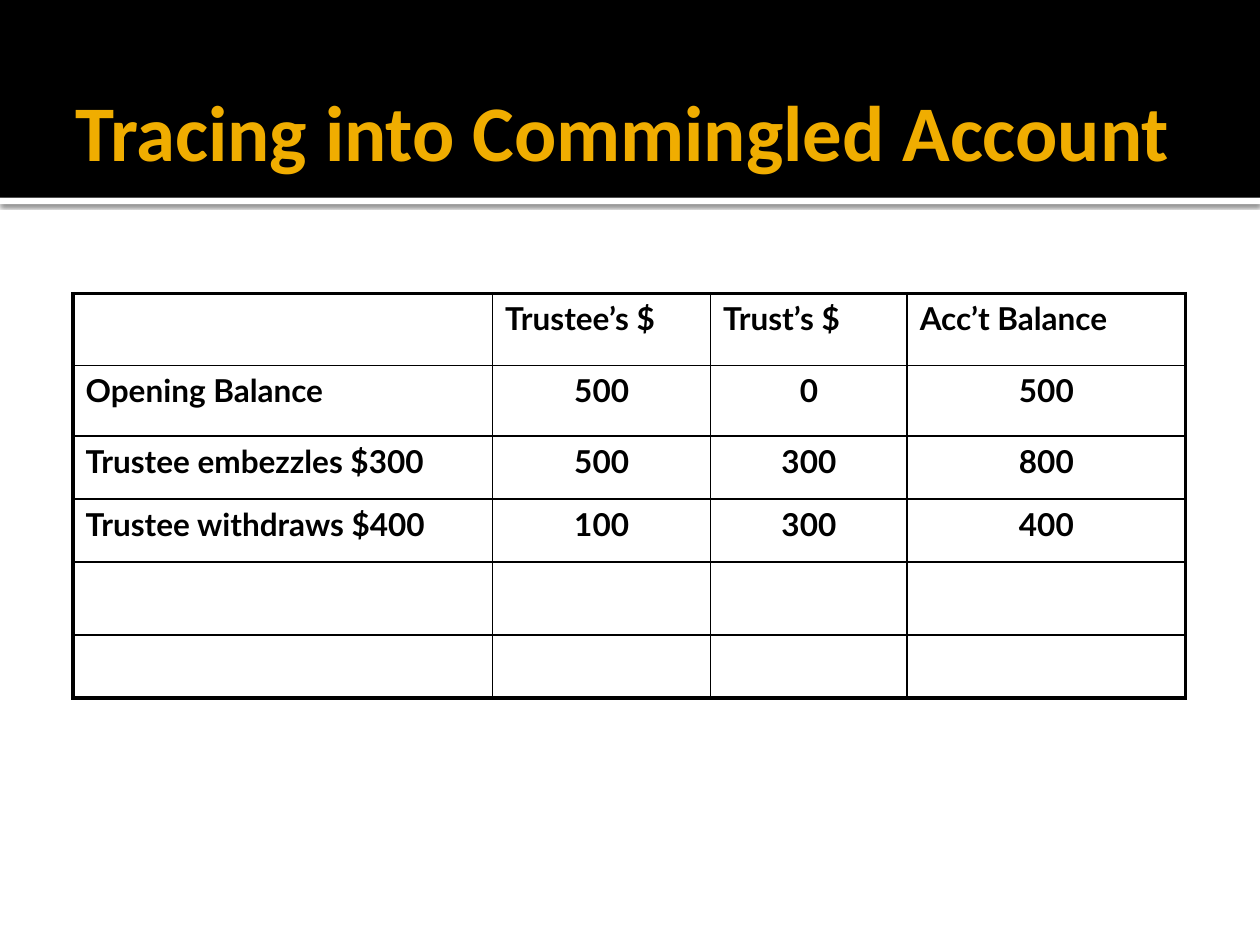
from lxml.etree import SubElement
from pptx import Presentation
from pptx.dml.color import RGBColor
from pptx.enum.shapes import MSO_SHAPE
from pptx.enum.text import MSO_ANCHOR, PP_ALIGN
from pptx.oxml.ns import qn
from pptx.util import Inches, Pt

BLACK = RGBColor(0x00, 0x00, 0x00)
WHITE = RGBColor(0xFF, 0xFF, 0xFF)
GOLD = RGBColor(0xF0, 0xAD, 0x00)

COLUMN_WIDTHS = [3.33, 1.73, 1.56, 2.21]
ROW_HEIGHTS = [0.57, 0.56, 0.5, 0.5, 0.58, 0.5]
LEDGER = [
    ["", "Trustee’s $", "Trust’s $", "Acc’t Balance"],
    ["Opening Balance", "500", "0", "500"],
    ["Trustee embezzles $300", "500", "300", "800"],
    ["Trustee withdraws $400", "100", "300", "400"],
    [""] * 4,
    [""] * 4,
]


def add_band(top, height, color):
    band = slide.shapes.add_shape(
        MSO_SHAPE.RECTANGLE, 0, Inches(top), Inches(10), Inches(height))
    band.shadow.inherit = False
    band.fill.solid()
    band.fill.fore_color.rgb = color
    band.line.fill.background()
    return band


def add_border(cell, side, width):
    border = SubElement(cell._tc.get_or_add_tcPr(), qn(f"a:ln{side}"), w=str(Pt(width)))
    fill = SubElement(border, qn("a:solidFill"))
    SubElement(fill, qn("a:srgbClr"), val=str(BLACK))


prs = Presentation()
prs.slide_width, prs.slide_height = Inches(10), Inches(7.5)
slide = prs.slides.add_slide(prs.slide_layouts[6])

# Header band with a shadowed white strip beneath it
strip = add_band(1.57, 0.05, WHITE)
effects = strip._element.spPr.find(qn("a:effectLst"))
shadow = SubElement(effects, qn("a:outerShdw"), blurRad=str(Pt(2.5)),
                    dist=str(Pt(0.8)), dir="5400000", algn="tl", rotWithShape="0")
shadow_color = SubElement(shadow, qn("a:srgbClr"), val=str(BLACK))
SubElement(shadow_color, qn("a:alpha"), val="60000")
add_band(0, 1.57, BLACK)

title = slide.shapes.add_textbox(Inches(0.5), Inches(0.23), Inches(9.28), Inches(1.6))
title_frame = title.text_frame
title_frame.word_wrap = True
title_frame.vertical_anchor = MSO_ANCHOR.MIDDLE
title_frame.margin_right = Inches(0.05)
title_frame.text = "Tracing into Commingled Account"
title_font = title_frame.paragraphs[0].runs[0].font
title_font.name, title_font.size, title_font.bold = "Calibri", Pt(45), True
title_font.color.rgb = GOLD

# Account ledger
last_row, last_col = len(ROW_HEIGHTS) - 1, len(COLUMN_WIDTHS) - 1
table = slide.shapes.add_table(
    len(ROW_HEIGHTS), len(COLUMN_WIDTHS), Inches(0.58), Inches(2.33),
    Inches(sum(COLUMN_WIDTHS)), Inches(sum(ROW_HEIGHTS))).table
table.first_row = table.horz_banding = False
for column, width in zip(table.columns, COLUMN_WIDTHS):
    column.width = Inches(width)
for row, height in zip(table.rows, ROW_HEIGHTS):
    row.height = Inches(height)

for r, entries in enumerate(LEDGER):
    for c, entry in enumerate(entries):
        cell = table.cell(r, c)
        outer_edges = {"L": c == 0, "R": c == last_col, "T": r == 0, "B": r == last_row}
        for side, is_outer in outer_edges.items():
            add_border(cell, side, 2.25 if is_outer else 1)
        cell.fill.background()
        cell.text_frame.text = entry
        paragraph = cell.text_frame.paragraphs[0]
        paragraph.alignment = PP_ALIGN.CENTER if r and c else PP_ALIGN.LEFT
        for run in paragraph.runs:
            run.font.name, run.font.size, run.font.bold = "Lato", Pt(18), True
            run.font.color.rgb = BLACK

prs.save("out.pptx")
